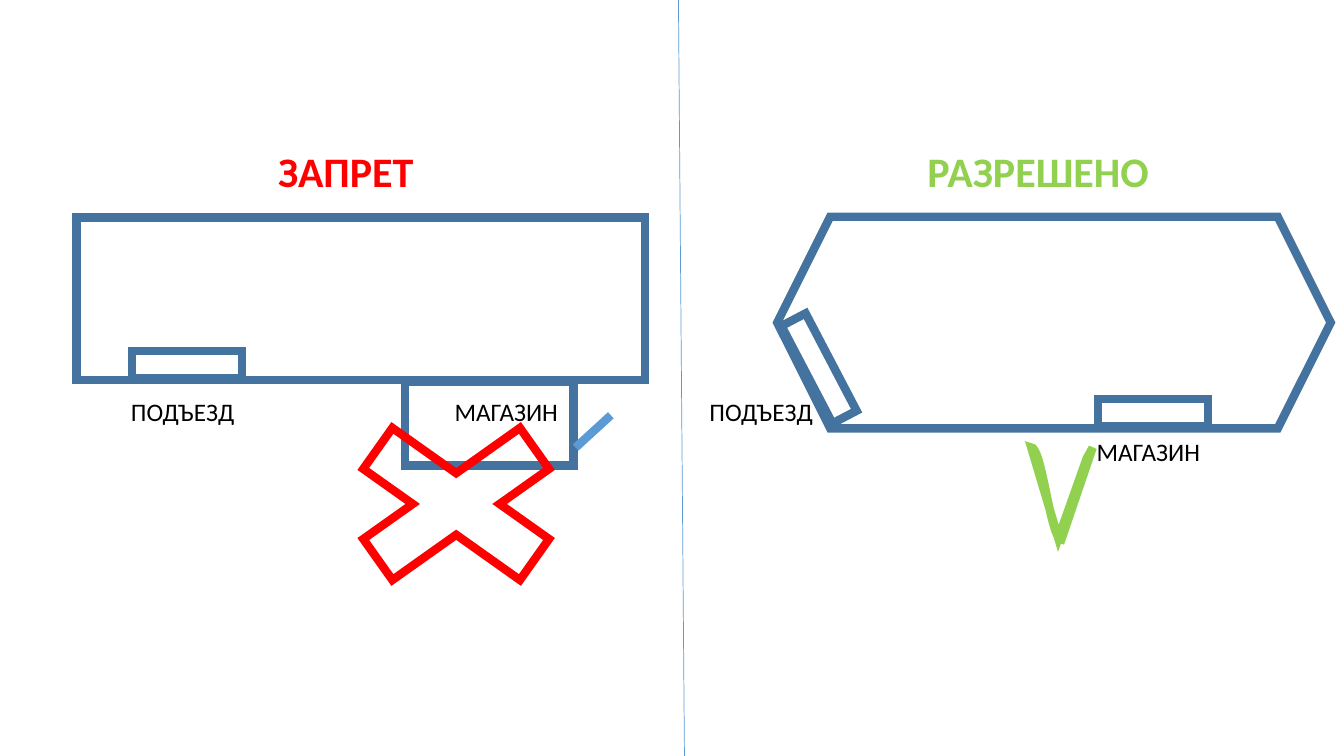
from dataclasses import dataclass

from lxml.etree import SubElement
from pptx import Presentation
from pptx.dml.color import RGBColor
from pptx.enum.shapes import MSO_CONNECTOR as Connector, MSO_SHAPE as Preset
from pptx.enum.text import MSO_ANCHOR as Anchor, MSO_AUTO_SIZE as AutoSize, PP_ALIGN as Align
from pptx.oxml.ns import qn
from pptx.util import Inches, Pt


@dataclass(frozen=True)
class Theme:
    font: str = "Calibri"
    heading: int = 30
    label: int = 18
    wall: int = 6
    hairline: float = 0.5
    black: str = "000000"
    white: str = "FFFFFF"
    navy: str = "43739E"
    blue: str = "5B9BD5"
    red: str = "FF0000"
    green: str = "92D050"


class Sketch:
    """Draws the themed elements of one slide, with lengths in percent of its size."""

    def __init__(self, deck, theme):
        self.deck, self.theme = deck, theme
        self.slide = deck.slides.add_slide(deck.slide_layouts[4])
        self.shapes = self.slide.shapes

    def point(self, x, y):
        return round(self.deck.slide_width * x / 100), round(self.deck.slide_height * y / 100)

    def box(self, x, y, width, height):
        return *self.point(x, y), *self.point(width, height)

    def stroke(self, line, color, width):
        line.color.rgb = RGBColor.from_string(color)
        line.width = Pt(width)

    def outline(self, shape, color, fill=None, rotation=0):
        shape.shadow.inherit = False
        shape.rotation = rotation
        if fill:
            shape.fill.solid()
            shape.fill.fore_color.rgb = RGBColor.from_string(fill)
        else:
            shape.fill.background()
        self.stroke(shape.line, color, self.theme.wall)
        edge = shape._element.spPr.find(qn("a:ln"))
        SubElement(edge, qn("a:miter")).set("lim", "800000")

    def preset(self, kind, area, color, fill=None, rotation=0):
        self.outline(self.shapes.add_shape(kind, *self.box(*area)), color, fill, rotation)

    def freeform(self, points, color, fill):
        start, *rest = [self.point(*p) for p in points]
        builder = self.shapes.build_freeform(*start)
        builder.add_line_segments(rest, close=True)
        self.outline(builder.convert_to_shape(), color, fill)

    def line(self, start, end, width):
        connector = self.shapes.add_connector(
            Connector.STRAIGHT, *self.point(*start), *self.point(*end))
        self.stroke(connector.line, self.theme.blue, width)
        SubElement(connector._element.spPr, qn("a:effectLst"))

    def set_text(self, frame, text, size, color, bold, align, anchor):
        layout = {"word_wrap": True, "auto_size": AutoSize.NONE, "vertical_anchor": anchor}
        for name, value in layout.items():
            setattr(frame, name, value)
        paragraph = frame.paragraphs[0]
        paragraph.alignment, paragraph.space_before = align, Pt(0)
        run = paragraph.add_run()
        run.text = text
        style = {"name": self.theme.font, "size": Pt(size), "bold": bold}
        for name, value in style.items():
            setattr(run.font, name, value)
        run.font.color.rgb = RGBColor.from_string(color)

    def heading(self, index, text, area, color):
        holder = next(p for p in self.slide.placeholders if p.placeholder_format.idx == index)
        holder.left, holder.top, holder.width, holder.height = self.box(*area)
        self.set_text(holder.text_frame, text, self.theme.heading, color, True,
                      Align.CENTER, Anchor.MIDDLE)

    def label(self, text, x, y):
        frame = self.shapes.add_textbox(*self.box(x, y, 9.75, 9.47)).text_frame
        self.set_text(frame, text, self.theme.label, self.theme.black, False,
                      Align.LEFT, Anchor.TOP)

    def doorway(self, x, y, rotation=0):
        self.preset(Preset.FLOWCHART_PROCESS, (x, y, 8.18, 3.6), self.theme.navy,
                    rotation=rotation)

    def drop_empty_placeholders(self):
        for holder in list(self.slide.placeholders):
            if not holder.text_frame.text:
                holder._element.getparent().remove(holder._element)


def bezier(controls, steps=24):
    a, b, c, d = controls
    return [
        tuple((1 - t) ** 3 * a[i] + 3 * (1 - t) ** 2 * t * b[i]
              + 3 * (1 - t) * t ** 2 * c[i] + t ** 3 * d[i] for i in (0, 1))
        for t in (step / steps for step in range(steps + 1))
    ]


def main():
    deck = Presentation()
    deck.slide_width, deck.slide_height = Inches(13.33), Inches(7.5)
    theme = Theme()
    sketch = Sketch(deck, theme)

    sketch.heading(1, "ЗАПРЕТ", (11.33, 18.53, 28.8, 8.13), theme.red)
    sketch.heading(3, "РАЗРЕШЕНО", (62.85, 18.53, 28.8, 8.13), theme.green)
    sketch.drop_empty_placeholders()

    sketch.preset(Preset.RECTANGLE, (5.7, 28.8, 42.3, 21.47), theme.navy, theme.white)
    sketch.doorway(9.83, 46.4)
    sketch.label("ПОДЪЕЗД", 9, 51.73)
    sketch.preset(Preset.FLOWCHART_PROCESS, (30.15, 50.53, 12.53, 11.07),
                  theme.navy, theme.white)
    sketch.label("МАГАЗИН", 33.08, 51.73)
    sketch.preset(Preset.MATH_MULTIPLY, (22.73, 52.53, 22.43, 28.27), theme.red)

    sketch.line((50.48, 0), (50.93, 100), theme.hairline)
    sketch.label("ПОДЪЕЗД", 52.05, 51.73)
    sketch.label("МАГАЗИН", 80.85, 57.07)
    tick_curve = bezier([(76.73, 59.2), (77.55, 59.2), (78.15, 71.33), (78.98, 71.33)])
    tick_arm = [(81.3, 59.2), (80.85, 60.67), (78.75, 71.2)]
    sketch.freeform(tick_curve + tick_arm, theme.green, theme.white)
    sketch.line((42.83, 59.2), (45.45, 54.93), theme.wall)

    sketch.preset(Preset.HEXAGON, (57.83, 28.67, 41.18, 28), theme.navy, theme.white)
    sketch.doorway(56.85, 46.93, 62.4)
    sketch.doorway(81.68, 52.8, 180)
    deck.save("out.pptx")


if __name__ == "__main__":
    main()
